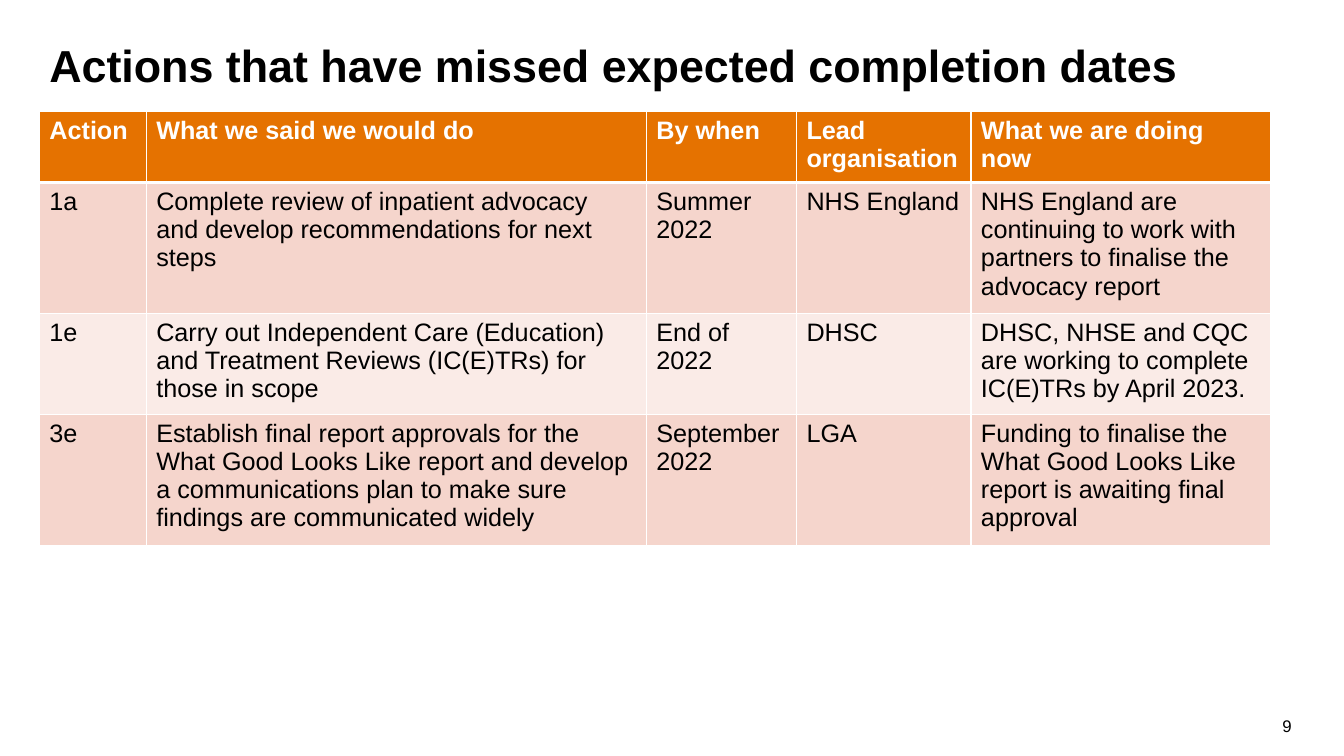
import pptx
import pptx.util
import pptx.dml.color
import pptx.enum.text
from lxml import etree

Inches = pptx.util.Inches
Pt = pptx.util.Pt
RGBColor = pptx.dml.color.RGBColor
Align = pptx.enum.text.PP_ALIGN
Anchor = pptx.enum.text.MSO_ANCHOR

BLACK = RGBColor(0x00, 0x00, 0x00)
WHITE = RGBColor(0xFF, 0xFF, 0xFF)
ORANGE = RGBColor(0xE5, 0x72, 0x00)
PINK = RGBColor(0xF5, 0xD5, 0xCC)
PALE_PINK = RGBColor(0xFA, 0xEB, 0xE7)

LEFT = 0.39
COLUMN_WIDTHS = [1.06, 4.96, 1.49, 1.73, 2.97]
ROW_HEIGHTS = [0.66, 1.22, 0.94, 1.22]
ROWS = [
    ["Action", "What we said we would do", "By when", "Lead organisation",
     "What we are doing now"],
    ["1a", "Complete review of inpatient advocacy and develop recommendations for next steps",
     "Summer 2022", "NHS England",
     "NHS England are continuing to work with partners to finalise the advocacy report"],
    ["1e", "Carry out Independent Care (Education) and Treatment Reviews (IC(E)TRs) "
     "for those in scope",
     "End of 2022", "DHSC",
     "DHSC, NHSE and CQC are working to complete IC(E)TRs by April 2023."],
    ["3e", "Establish final report approvals for the What Good Looks Like report and "
     "develop a communications plan to make sure findings are communicated widely",
     "September 2022", "LGA",
     "Funding to finalise the What Good Looks Like report is awaiting final approval"],
]


def add_span(para, text, size, color, bold=False):
    span = para.add_run()
    span.text = text
    span.font.name = "Arial"
    span.font.size = Pt(size)
    span.font.bold = bold
    span.font.color.rgb = color


def add_border(cell, side, width):
    properties = cell._tc.get_or_add_tcPr()
    line = etree.SubElement(properties, pptx.oxml.ns.qn("a:" + side), w=str(Pt(width)))
    fill = etree.SubElement(line, pptx.oxml.ns.qn("a:solidFill"))
    etree.SubElement(fill, pptx.oxml.ns.qn("a:srgbClr"), val=str(WHITE))


deck = pptx.Presentation()
deck.slide_width = Inches(13.33)
deck.slide_height = Inches(7.5)
page = deck.slides.add_slide(deck.slide_layouts[6])

# Title and page number
labels = [
    ("Actions that have missed expected completion dates",
     (LEFT, 0.32, 12.52, 0.7), 32, True, Align.LEFT, Anchor.MIDDLE, 0.9),
    ("9", (12.08, 6.95, 0.83, 0.4), 12, False, Align.RIGHT, Anchor.BOTTOM, 1.0),
]
for text, place, size, bold, align, anchor, spacing in labels:
    box = page.shapes.add_textbox(*map(Inches, place))
    box.text_frame.word_wrap = True
    box.text_frame.vertical_anchor = anchor
    para = box.text_frame.paragraphs[0]
    para.alignment = align
    para.line_spacing = spacing
    add_span(para, text, size, BLACK, bold)

# Table of overdue actions
table = page.shapes.add_table(
    len(ROWS), len(COLUMN_WIDTHS), Inches(LEFT), Inches(1.11),
    Inches(sum(COLUMN_WIDTHS)), Inches(sum(ROW_HEIGHTS))).table
for column, width in zip(table.columns, COLUMN_WIDTHS):
    column.width = Inches(width)
for row, height in zip(table.rows, ROW_HEIGHTS):
    row.height = Inches(height)

for r, texts in enumerate(ROWS):
    header = r == 0
    band = ORANGE if header else PINK if r % 2 else PALE_PINK
    for c, text in enumerate(texts):
        cell = table.cell(r, c)
        # Borders precede the fill in the cell properties
        for side in ("lnL", "lnR", "lnT", "lnB"):
            thick = (header and side == "lnB") or (r == 1 and side == "lnT")
            add_border(cell, side, 3 if thick else 1)
        cell.fill.solid()
        cell.fill.fore_color.rgb = band
        add_span(cell.text_frame.paragraphs[0], text, 18,
                 WHITE if header else BLACK, header)

deck.save("out.pptx")
